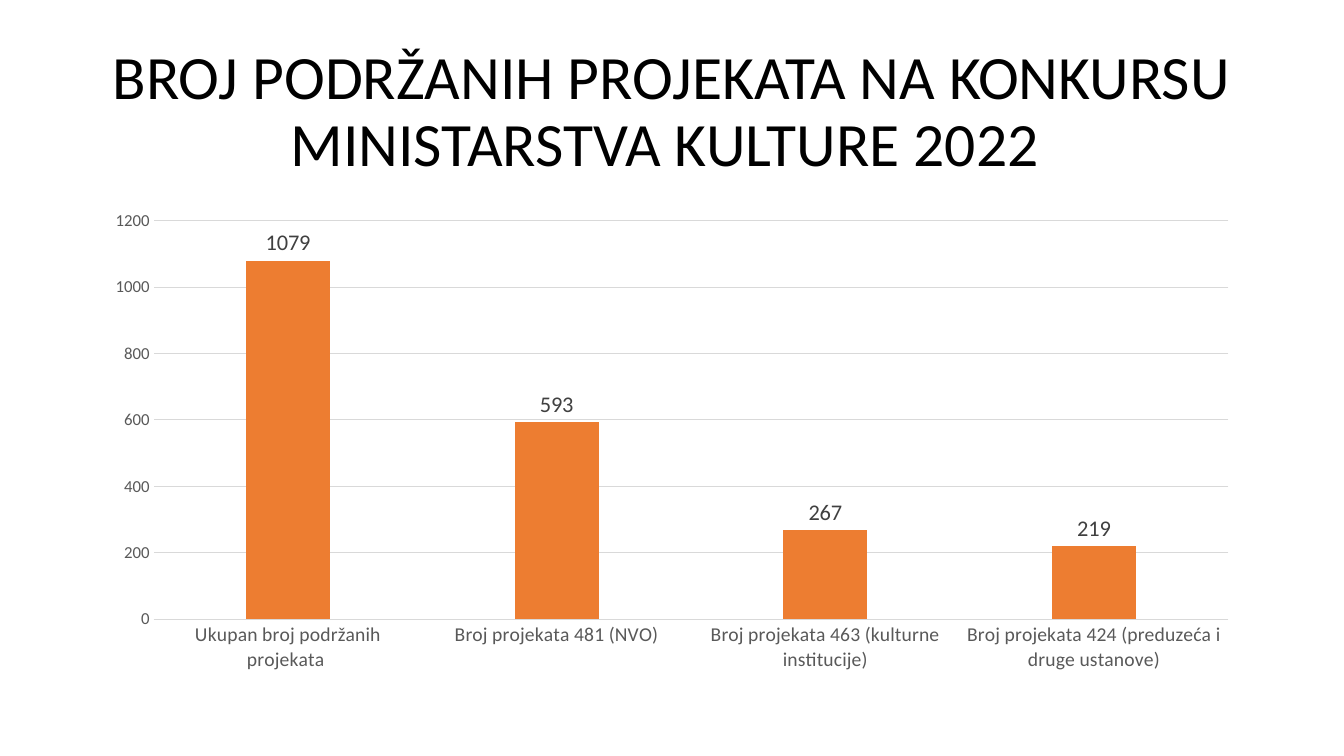
from pptx import Presentation
from pptx.chart.data import CategoryChartData
from pptx.dml.color import RGBColor
from pptx.enum.chart import XL_CHART_TYPE as ChartType
from pptx.enum.chart import XL_LABEL_POSITION as LabelPosition
from pptx.enum.chart import XL_TICK_MARK as TickMark
from pptx.enum.text import MSO_ANCHOR as Anchor
from pptx.enum.text import PP_ALIGN as Align
from pptx.util import Cm, Pt

TITLE = "BROJ PODRŽANIH PROJEKATA NA KONKURSU MINISTARSTVA KULTURE 2022 "
PROJECTS = {
    "Ukupan broj podržanih projekata ": 1079,
    "Broj projekata 481 (NVO)": 593,
    "Broj projekata 463 (kulturne institucije)": 267,
    "Broj projekata 424 (preduzeća i druge ustanove)": 219,
}
FONT = "Calibri"
BLACK, DARK_GREY, GREY, LIGHT_GREY, ORANGE = (
    "000000", "404040", "595959", "D9D9D9", "ED7D31")

SLIDE_WIDTH, SLIDE_HEIGHT = 33.87, 19.05
MARGIN = 2.33
CONTENT_WIDTH = SLIDE_WIDTH - 2 * MARGIN
TITLE_TOP, TITLE_HEIGHT = 1.01, 3.68
CHART_TOP, CHART_HEIGHT = 5.07, 12.09


def set_all(target, values):
    for name, value in values.items():
        setattr(target, name, value)


def color(hex_value):
    return RGBColor.from_string(hex_value)


def style_font(font, size, hex_value):
    set_all(font, {"name": FONT, "size": Pt(size), "bold": False})
    font.color.rgb = color(hex_value)


def style_line(line):
    line.width = Pt(0.75)
    line.color.rgb = color(LIGHT_GREY)


def add_title(slide):
    box = slide.shapes.add_textbox(
        Cm(MARGIN), Cm(TITLE_TOP), Cm(CONTENT_WIDTH), Cm(TITLE_HEIGHT))
    set_all(box.text_frame, {"word_wrap": True, "vertical_anchor": Anchor.MIDDLE})
    paragraph = box.text_frame.paragraphs[0]
    set_all(paragraph, {"alignment": Align.CENTER, "line_spacing": 0.9})
    run = paragraph.add_run()
    run.text = TITLE
    style_font(run.font, 44, BLACK)


def add_project_chart(slide):
    data = CategoryChartData()
    data.categories = list(PROJECTS)
    data.add_series("Series 1", list(PROJECTS.values()))
    chart = slide.shapes.add_chart(
        ChartType.COLUMN_CLUSTERED, Cm(MARGIN), Cm(CHART_TOP),
        Cm(CONTENT_WIDTH), Cm(CHART_HEIGHT), data).chart
    set_all(chart, {"has_title": False, "has_legend": False})
    style_font(chart.font, 10, BLACK)

    for axis, size in ((chart.category_axis, 14), (chart.value_axis, 12)):
        set_all(axis, {"major_tick_mark": TickMark.NONE,
                       "minor_tick_mark": TickMark.NONE})
        style_font(axis.tick_labels.font, size, GREY)
    style_line(chart.category_axis.format.line)
    set_all(chart.value_axis, {"minimum_scale": 0, "maximum_scale": 1200,
                               "major_unit": 200})
    chart.value_axis.format.line.fill.background()
    style_line(chart.value_axis.major_gridlines.format.line)

    plot = chart.plots[0]
    set_all(plot, {"gap_width": 219, "overlap": -27, "vary_by_categories": False})
    series = plot.series[0]
    series.format.fill.solid()
    series.format.fill.fore_color.rgb = color(ORANGE)
    labels = series.data_labels
    set_all(labels, {"show_value": True, "position": LabelPosition.OUTSIDE_END})
    style_font(labels.font, 16, DARK_GREY)


def main():
    presentation = Presentation()
    set_all(presentation, {"slide_width": Cm(SLIDE_WIDTH),
                           "slide_height": Cm(SLIDE_HEIGHT)})
    slide = presentation.slides.add_slide(presentation.slide_layouts[6])
    add_title(slide)
    add_project_chart(slide)
    presentation.save("out.pptx")


if __name__ == "__main__":
    main()
